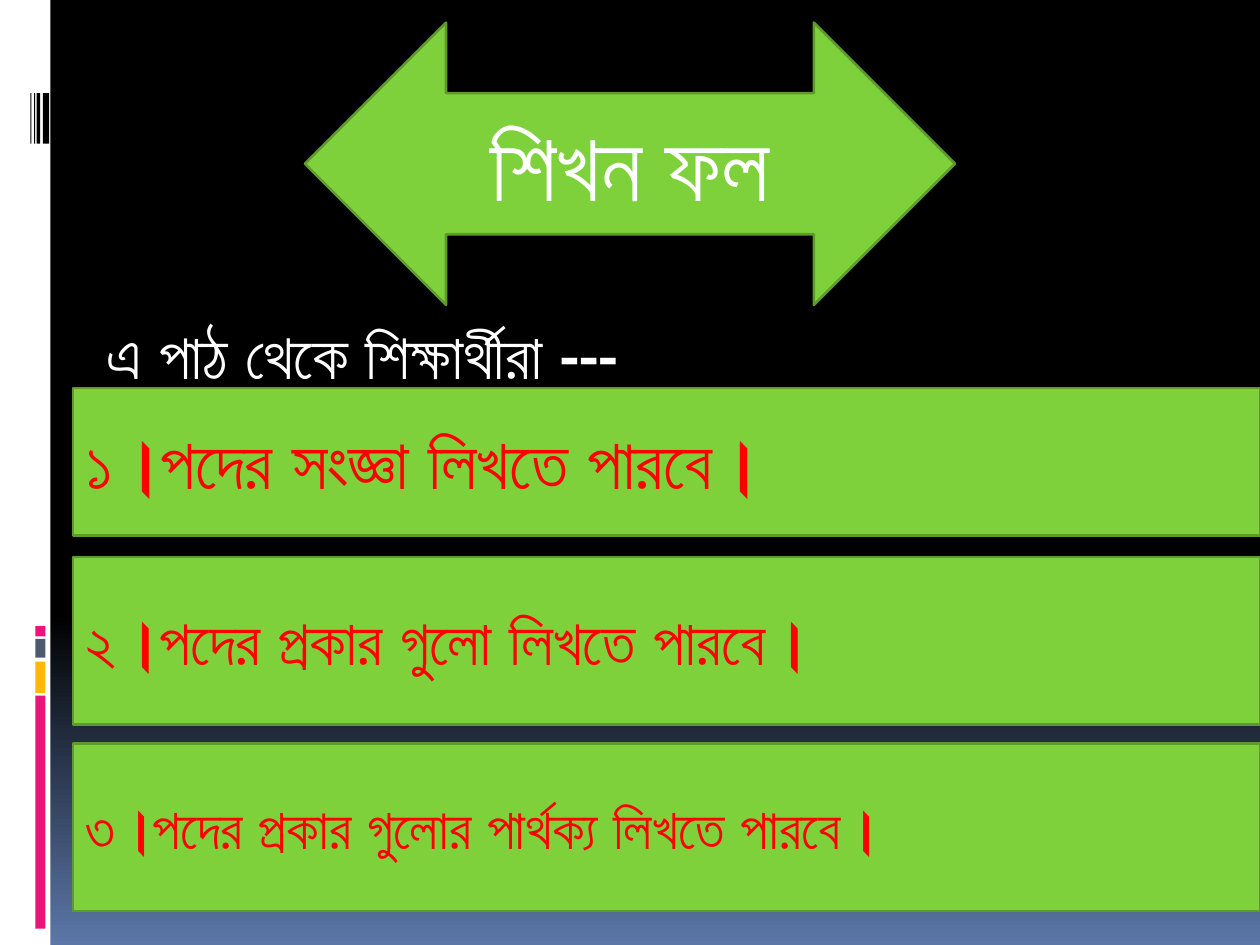
from dataclasses import dataclass

from pptx import Presentation
from pptx.dml.color import RGBColor
from pptx.enum.shapes import MSO_SHAPE as Shape
from pptx.enum.text import MSO_ANCHOR as Anchor, MSO_AUTO_SIZE as AutoSize, PP_ALIGN as Align
from pptx.util import Inches, Pt


@dataclass(frozen=True)
class Theme:
    """Colours, font and type sizes of the slide."""
    black: str = "000000"
    white: str = "FFFFFF"
    slate: str = "4E5B6F"
    sky: str = "5B77A8"
    pink: str = "EA157A"
    amber: str = "FEB80A"
    green: str = "7FD13B"
    green_edge: str = "5E9B2C"
    red: str = "FF0000"
    font: str = "Calibri"
    heading_size: int = 54
    lead_size: int = 36
    outcome_sizes: tuple = (40, 36, 32)
    edge_width: float = 1.5


THEME = Theme()


def paint_background(slide):
    """Fade the lower third of the slide from black to blue."""
    fill = slide.background.fill
    fill.gradient()
    fill.gradient_angle = 270
    for stop, position, color in zip(fill.gradient_stops, (0.65, 1), (THEME.black, THEME.sky)):
        stop.position = position
        stop.color.rgb = RGBColor.from_string(color)


def add_block(slide, preset, box, color, edge=None):
    """Add a filled preset shape, outlined only when an edge colour is given."""
    block = slide.shapes.add_shape(preset, *map(Inches, box))
    block.shadow.inherit = False
    block.fill.solid()
    block.fill.fore_color.rgb = RGBColor.from_string(color)
    if edge:
        block.line.color.rgb = RGBColor.from_string(edge)
        block.line.width = Pt(THEME.edge_width)
    else:
        block.line.fill.background()
    return block


def write(holder, text, size, color, bold=False, align=Align.LEFT, anchor=Anchor.MIDDLE):
    """Write one formatted paragraph into a shape."""
    frame = holder.text_frame
    frame.word_wrap = True
    frame.vertical_anchor = anchor
    paragraph = frame.paragraphs[0]
    paragraph.text = text
    paragraph.alignment = align
    font = paragraph.font
    font.name, font.size, font.bold = THEME.font, Pt(size), bold
    font.color.rgb = RGBColor.from_string(color)


def add_side_band(slide, box):
    """Add the white band with its barcode and coloured bars."""
    left, top, width, height = box
    add_block(slide, Shape.RECTANGLE, box, THEME.white)
    bars = (
        (5.52, 1.85, THEME.pink),
        (5.25, 0.25, THEME.amber),
        (5.07, 0.15, THEME.slate),
        (4.97, 0.08, THEME.pink),
    )
    for offset, length, color in bars:
        add_block(slide, Shape.RECTANGLE, (left + 0.28, top + offset, 0.08, length), color)
    for offset, thickness in ((0.34, 0.05), (0.29, 0.03), (0.27, 0.01), (0.24, 0.01)):
        add_block(slide, Shape.RECTANGLE, (left + offset, top + 0.74, thickness, 0.4), THEME.black)


def add_heading(slide, box):
    """Add the double arrow that carries the heading."""
    arrow = add_block(slide, Shape.LEFT_RIGHT_ARROW, box, THEME.green, THEME.green_edge)
    write(arrow, "শিখন ফল", THEME.heading_size, THEME.white, align=Align.CENTER)


def add_outcomes(slide, box):
    """Add the stacked learning outcomes."""
    left, top, width, height = box
    outcomes = (
        (0, 1.17, "১।পদের সংজ্ঞা লিখতে পারবে।"),
        (1.34, 1.33, "২।পদের প্রকার গুলো লিখতে পারবে।"),
        (2.82, 1.33, "৩।পদের প্রকার গুলোর পার্থক্য লিখতে পারবে।"),
    )
    for (offset, depth, text), size in zip(outcomes, THEME.outcome_sizes):
        panel = add_block(slide, Shape.RECTANGLE, (left, top + offset, width, depth),
                          THEME.green, THEME.green_edge)
        write(panel, text, size, THEME.red, bold=True)


def add_lead(slide, box):
    """Add the line that introduces the outcomes."""
    lead = slide.shapes.add_textbox(*map(Inches, box))
    write(lead, "এ পাঠ থেকে শিক্ষার্থীরা ---", THEME.lead_size, THEME.white,
          bold=True, anchor=Anchor.TOP)
    lead.text_frame.auto_size = AutoSize.SHAPE_TO_FIT_TEXT


def main():
    """Build and save the slide."""
    deck = Presentation()
    deck.slide_width, deck.slide_height = Inches(10), Inches(7.5)
    slide = deck.slides.add_slide(deck.slide_layouts.get_by_name("Blank"))
    paint_background(slide)
    add_side_band(slide, (0, 0, 0.4, 7.5))
    add_heading(slide, (2.42, 0.18, 5.16, 2.24))
    add_outcomes(slide, (0.58, 3.08, 9.42, 4.15))
    add_lead(slide, (0.75, 2.46, 7.08, 0.71))
    deck.save("out.pptx")


if __name__ == "__main__":
    main()
